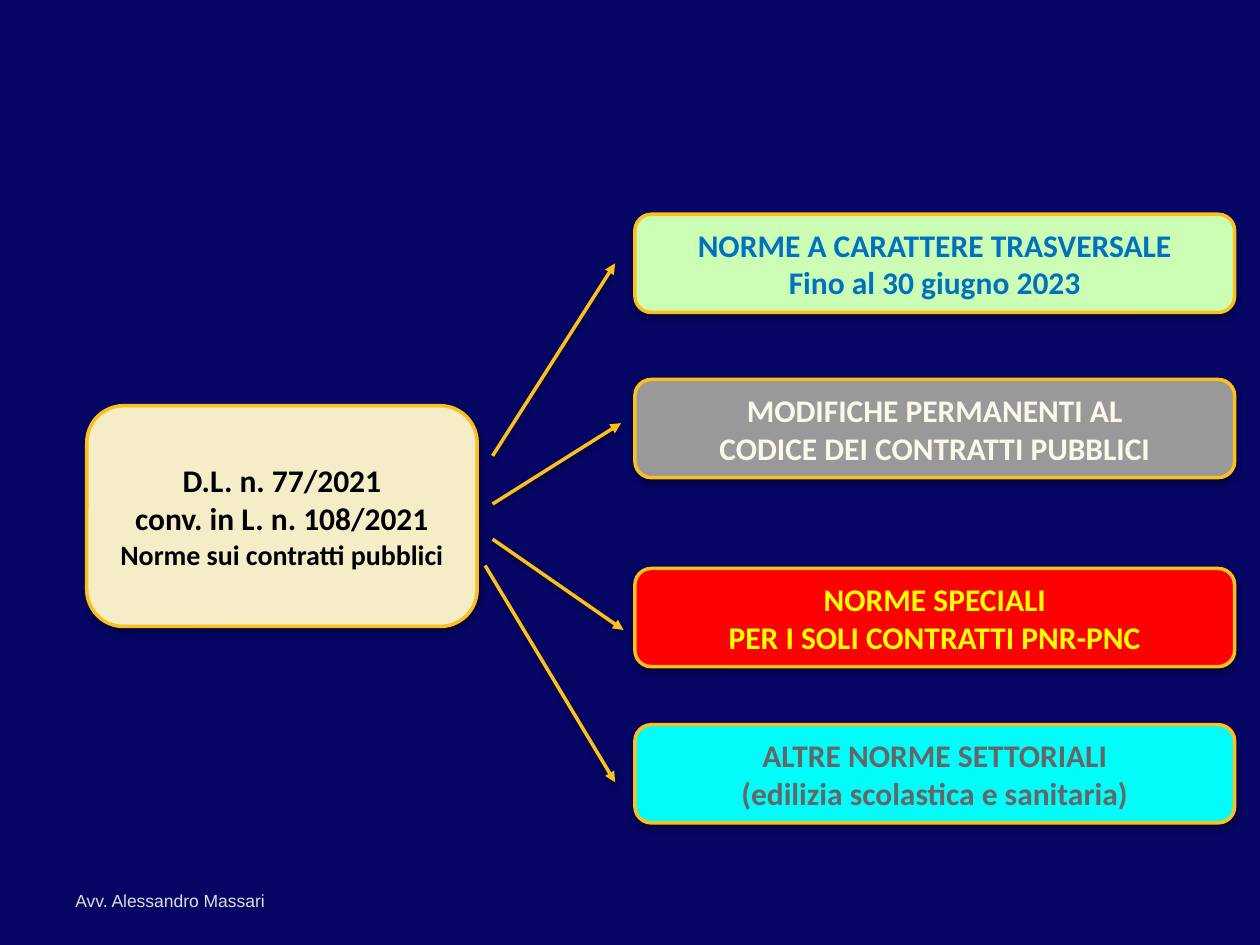
from lxml.etree import SubElement
from pptx import Presentation
from pptx.dml.color import RGBColor
from pptx.enum.shapes import MSO_CONNECTOR, MSO_SHAPE
from pptx.enum.text import MSO_ANCHOR, PP_ALIGN
from pptx.oxml.ns import qn
from pptx.util import Cm, Pt

COLORS = {
    "background": "050563",
    "border": "FBC01E",
    "shadow": "000000",
    "footer": "DDDDDD",
    "decree": "F5EDC7",
    "decree_text": "000000",
    "general": "CBFDB5",
    "general_text": "0070C0",
    "permanent": "999999",
    "permanent_text": "FCF9EC",
    "special": "FF0000",
    "special_text": "FFFF00",
    "sector": "00FDF9",
    "sector_text": "666666",
}
FRAME_FORMAT = {
    "word_wrap": True,
    "vertical_anchor": MSO_ANCHOR.MIDDLE,
    "margin_left": Cm(0.13),
    "margin_right": Cm(0.13),
    "margin_top": Cm(0.13),
    "margin_bottom": Cm(0.13),
}


def add_shadow(effects, distance, opacity):
    shadow = SubElement(effects, qn("a:outerShdw"), blurRad=str(Pt(3)),
                        dist=str(Pt(distance)), dir="5400000", rotWithShape="0")
    color = SubElement(shadow, qn("a:srgbClr"), val=COLORS["shadow"])
    SubElement(color, qn("a:alpha"), val=str(opacity * 1000))


def write_line(paragraph, text, color, **font_format):
    run = paragraph.add_run()
    run.text = text
    run.font.color.rgb = RGBColor.from_string(COLORS[color])
    for attribute, value in font_format.items():
        setattr(run.font, attribute, value)


presentation = Presentation()
presentation.slide_width = Cm(25.4)
presentation.slide_height = Cm(19.05)
slide = presentation.slides.add_slide(presentation.slide_layouts[6])
slide.background.fill.solid()
slide.background.fill.fore_color.rgb = RGBColor.from_string(COLORS["background"])

author = slide.shapes.add_textbox(Cm(1.27), Cm(17.65), Cm(5.92), Cm(1.02)).text_frame
author.word_wrap = True
author.vertical_anchor = MSO_ANCHOR.MIDDLE
write_line(author.paragraphs[0], "Avv. Alessandro Massari", "footer", name="Arial", size=Pt(10))

norm_left, norm_width, norm_height = 12.8, 12.09, 1.98
boxes = [
    ("decree", 1.75, 8.18, 7.87, 4.45,
     [("D.L. n. 77/2021", 18), ("conv. in L. n. 108/2021", 18),
      ("Norme sui contratti pubblici", 16)]),
    ("general", norm_left, 4.32, norm_width, norm_height,
     [("NORME A CARATTERE TRASVERSALE", 18), ("Fino al 30 giugno 2023", 18)]),
    ("permanent", norm_left, 7.65, norm_width, norm_height,
     [("MODIFICHE PERMANENTI AL", 18), ("CODICE DEI CONTRATTI PUBBLICI", 18)]),
    ("special", norm_left, 11.46, norm_width, norm_height,
     [("NORME SPECIALI", 18), ("PER I SOLI CONTRATTI PNR-PNC", 18)]),
    ("sector", norm_left, 14.61, norm_width, norm_height,
     [("ALTRE NORME SETTORIALI", 18), ("(edilizia scolastica e sanitaria)", 18)]),
]
for topic, left, top, width, height, lines in boxes:
    box = slide.shapes.add_shape(MSO_SHAPE.ROUNDED_RECTANGLE,
                                 Cm(left), Cm(top), Cm(width), Cm(height))
    box.fill.solid()
    box.fill.fore_color.rgb = RGBColor.from_string(COLORS[topic])
    box.line.color.rgb = RGBColor.from_string(COLORS["border"])
    box.line.width = Pt(2)
    box.shadow.inherit = False
    add_shadow(box.element.spPr.find(qn("a:effectLst")), 1.8, 35)
    frame = box.text_frame
    for attribute, value in FRAME_FORMAT.items():
        setattr(frame, attribute, value)
    for index, (text, size) in enumerate(lines):
        paragraph = frame.add_paragraph() if index else frame.paragraphs[0]
        paragraph.alignment = PP_ALIGN.CENTER
        write_line(paragraph, text, f"{topic}_text", name="Calibri", size=Pt(size), bold=True)

arrows = [
    (9.93, 9.19, 12.4, 5.31),
    (9.93, 10.16, 12.52, 8.53),
    (9.93, 10.87, 12.57, 12.7),
    (9.78, 11.4, 12.4, 15.77),
]
for ends in arrows:
    arrow = slide.shapes.add_connector(MSO_CONNECTOR.STRAIGHT, *map(Cm, ends))
    arrow.line.color.rgb = RGBColor.from_string(COLORS["border"])
    arrow.line.width = Pt(2)
    properties = arrow.element.spPr
    SubElement(properties.find(qn("a:ln")), qn("a:tailEnd"), type="triangle")
    add_shadow(SubElement(properties, qn("a:effectLst")), 1.6, 38)

presentation.save("out.pptx")
